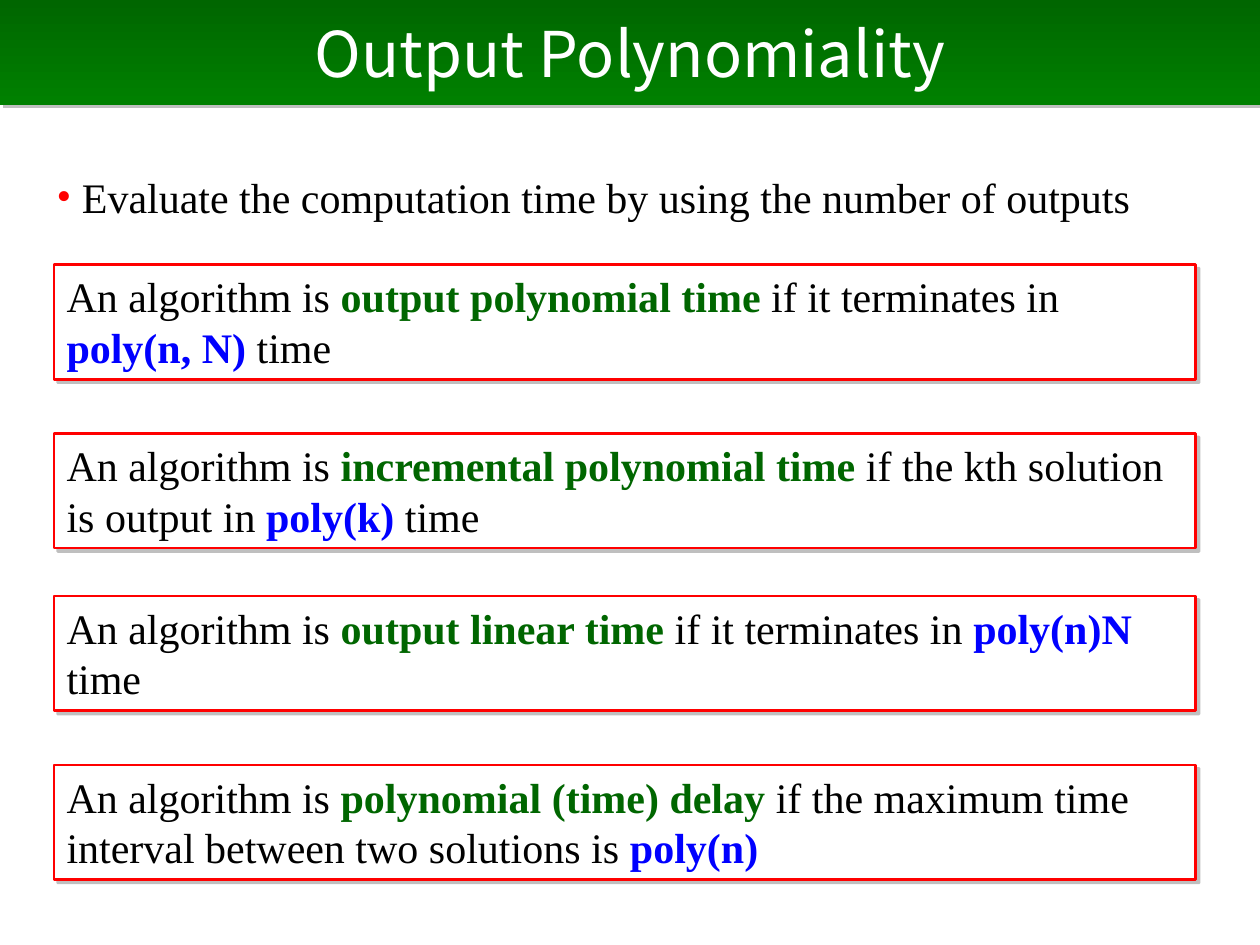
"""Build a slide that defines the output-polynomial classes of algorithms."""
from typing import NamedTuple

import lxml.etree
import pptx
import pptx.dml.color
import pptx.enum.shapes
import pptx.enum.text
import pptx.oxml.ns
import pptx.util

COLORS = {
    "text": "000000",
    "title": "FFFFFF",
    "paper": "FFFFFF",
    "term": "006600",
    "bound": "0000FF",
    "accent": "FF0000",
    "bar_top": "006600",
    "bar_bottom": "008000",
    "shadow": "808080",
}
SERIF, SANS = "Times New Roman", "Noto Sans CJK JP"
COLS, ROWS = 1000, 750
WIDTH, HEIGHT = pptx.util.Inches(10), pptx.util.Inches(7.5)


class Area(NamedTuple):
    col: float
    row: float
    cols: float
    rows: float


class Definition(NamedTuple):
    term: str
    condition: str
    bound: str
    ending: str = ""


TITLE_BAR = Area(0, 0, COLS, 83)
LEAD = Area(35, 131, 937, 63)
FIRST_BOX = Area(43, 210, 906, 91)
PAIR_PITCH, BOX_PITCH = 263, 134

DEFINITIONS = [
    Definition("output polynomial time ", "if it terminates in ", "poly(n, N)", " time"),
    Definition("incremental polynomial time ", "if the kth solution is output in ", "poly(k)", " time"),
    Definition("output linear time ", "if it terminates in ", "poly(n)N", " time"),
    Definition("polynomial (time) delay ", "if the maximum time interval between two solutions is ", "poly(n)"),
]


def rgb(name: str) -> pptx.dml.color.RGBColor:
    return pptx.dml.color.RGBColor.from_string(COLORS[name])


def measure(area: Area) -> tuple[int, int, int, int]:
    x, y = WIDTH / COLS, HEIGHT / ROWS
    return int(area.col * x), int(area.row * y), int(area.cols * x), int(area.rows * y)


def place(sp, area: Area) -> None:
    sp.left, sp.top, sp.width, sp.height = measure(area)


def add_xml(parent, tag: str, **attrs: str):
    return lxml.etree.SubElement(parent, pptx.oxml.ns.qn(tag), attrs)


def add_text(p, text: str, *, color: str = "text", bold: bool = False,
             size: float = 24, font: str = SERIF) -> None:
    r = p.add_run()
    r.text = text
    r.font.name, r.font.size, r.font.bold = font, pptx.util.Pt(size), bold
    r.font.color.rgb = rgb(color)


def add_shadow(sp) -> None:
    sp.shadow.inherit = False
    effects = sp._element.spPr.find(pptx.oxml.ns.qn("a:effectLst"))
    shadow = add_xml(effects, "a:outerShdw", blurRad="0", dist=str(pptx.util.Pt(2.8)),
                     dir=str(45 * 60000), algn="ctr", rotWithShape="0")
    color = add_xml(shadow, "a:srgbClr", val=COLORS["shadow"])
    add_xml(color, "a:alpha", val="50000")


def format_title(sp) -> None:
    place(sp, TITLE_BAR)
    sp.fill.gradient()
    sp.fill.gradient_angle = 270
    for stop, name in zip(sp.fill.gradient_stops, ("bar_top", "bar_bottom")):
        stop.color.rgb = rgb(name)
    add_shadow(sp)
    tf = sp.text_frame
    tf.auto_size = pptx.enum.text.MSO_AUTO_SIZE.NONE
    tf.vertical_anchor = pptx.enum.text.MSO_ANCHOR.MIDDLE
    p = tf.paragraphs[0]
    p.alignment = pptx.enum.text.PP_ALIGN.CENTER
    add_text(p, "Output Polynomiality", color="title", size=36, font=SANS)


def format_lead(sp) -> None:
    place(sp, LEAD)
    tf = sp.text_frame
    tf.auto_size = pptx.enum.text.MSO_AUTO_SIZE.NONE
    p = tf.paragraphs[0]
    add_text(p, "Evaluate the computation time by using the number of outputs")
    props = p._p.get_or_add_pPr()
    indent = pptx.util.Inches(0.2)
    props.set("marL", str(indent))
    props.set("indent", str(-indent))
    add_xml(add_xml(props, "a:buClr"), "a:srgbClr", val=COLORS["accent"])
    add_xml(props, "a:buFont", typeface=SERIF)
    add_xml(props, "a:buChar", char="•")


def add_definition(slide, area: Area, item: Definition) -> None:
    sp = slide.shapes.add_shape(pptx.enum.shapes.MSO_SHAPE.RECTANGLE, *measure(area))
    sp.fill.solid()
    sp.fill.fore_color.rgb = rgb("paper")
    sp.line.color.rgb = rgb("accent")
    sp.line.width = pptx.util.Pt(1.5)
    add_shadow(sp)
    tf = sp.text_frame
    tf.word_wrap = True
    tf.auto_size = pptx.enum.text.MSO_AUTO_SIZE.SHAPE_TO_FIT_TEXT
    tf.vertical_anchor = pptx.enum.text.MSO_ANCHOR.TOP
    p = tf.paragraphs[0]
    p.alignment = pptx.enum.text.PP_ALIGN.LEFT
    add_text(p, "An algorithm is ")
    add_text(p, item.term, color="term", bold=True)
    add_text(p, item.condition)
    add_text(p, item.bound, color="bound", bold=True)
    if item.ending:
        add_text(p, item.ending)


def main() -> None:
    prs = pptx.Presentation()
    prs.slide_width, prs.slide_height = WIDTH, HEIGHT
    slide = prs.slides.add_slide(prs.slide_layouts[1])
    format_title(slide.shapes.title)
    format_lead(slide.placeholders[1])
    for i, item in enumerate(DEFINITIONS):
        pair, place_in_pair = divmod(i, 2)
        row = FIRST_BOX.row + pair * PAIR_PITCH + place_in_pair * BOX_PITCH
        add_definition(slide, FIRST_BOX._replace(row=row), item)
    prs.save("out.pptx")


if __name__ == "__main__":
    main()
